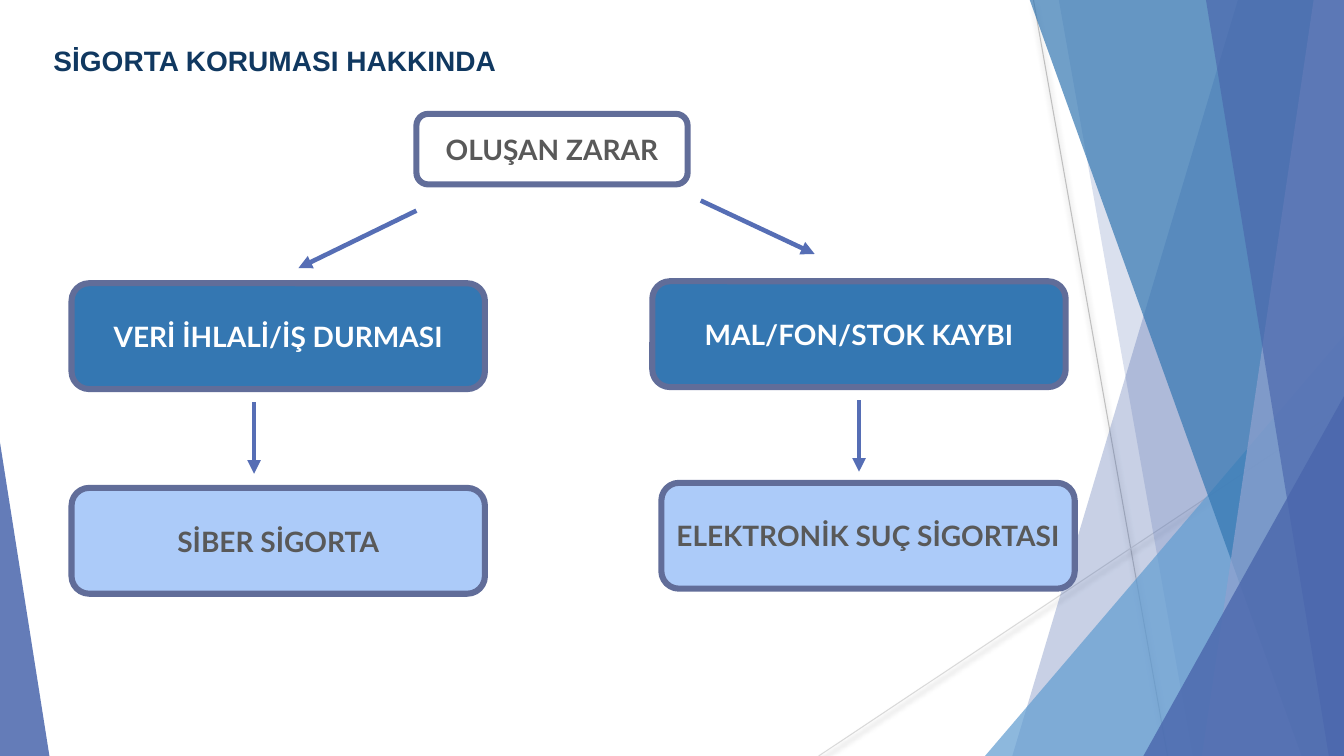
from dataclasses import dataclass

from pptx import Presentation
from pptx.dml.color import RGBColor
from pptx.enum.shapes import MSO_CONNECTOR, MSO_SHAPE
from pptx.enum.text import MSO_ANCHOR, MSO_AUTO_SIZE, PP_ALIGN
from pptx.oxml import parse_xml
from pptx.oxml.ns import nsdecls
from pptx.util import Inches, Pt


@dataclass(frozen=True)
class Theme:
    title: str = "103860"
    text: str = "595959"
    white: str = "FFFFFF"
    indigo: str = "4A66AC"
    blue: str = "3477B2"
    sky: str = "629DD1"
    lavender: str = "90A2CF"
    pale: str = "ACCBF9"
    border: str = "616D99"
    arrow: str = "566EB5"
    hairline: str = "BFBFBF"
    hairline_light: str = "D9D9D9"
    heading_font: str = "Arial"
    box_font: str = "Lato"
    size: int = 20
    border_width: float = 4.33
    arrow_width: float = 3.25
    hairline_width: float = 0.75


THEME = Theme()
SLIDE_W, SLIDE_H = 13.33, 7.5
SHADOW = ('<a:outerShdw blurRad="50800" dist="38100" dir="5400000" rotWithShape="0">'
          '<a:srgbClr val="000000"><a:alpha val="35000"/></a:srgbClr></a:outerShdw>')


def write_text(sp, text, font=THEME.box_font, color=THEME.text,
               align=PP_ALIGN.CENTER, anchor=MSO_ANCHOR.MIDDLE, wrap=True):
    tf = sp.text_frame
    tf.word_wrap = wrap
    tf.vertical_anchor = anchor
    p = tf.paragraphs[0]
    p.alignment = align
    r = p.add_run()
    r.text = text
    r.font.name = font
    r.font.size = Pt(THEME.size)
    r.font.bold = True
    r.font.color.rgb = RGBColor.from_string(color)


def add_line(start, end, color, width, effect=""):
    """Draw a straight line whose only effect is the given effect XML."""
    line = slide.shapes.add_connector(
        MSO_CONNECTOR.STRAIGHT, *(Inches(v) for v in (*start, *end)))
    line.line.color.rgb = RGBColor.from_string(color)
    line.line.width = Pt(width)
    line._element.spPr.append(
        parse_xml(f'<a:effectLst {nsdecls("a")}>{effect}</a:effectLst>'))
    return line


prs = Presentation()
prs.slide_width, prs.slide_height = Inches(SLIDE_W), Inches(SLIDE_H)
slide = prs.slides.add_slide(prs.slide_layouts[5])

# Decorative hairlines
add_line((10.25, 0), (11.58, SLIDE_H), THEME.hairline, THEME.hairline_width, SHADOW)
add_line((SLIDE_W, 4.03), (8.12, SLIDE_H), THEME.hairline_light,
         THEME.hairline_width, SHADOW)

# Bands run from a top-left x to a bottom-left x and on to the right edge;
# triangles have left, top, width, height and apex position.
facets = [
    ("band", (12.28, 10.04), THEME.indigo, 30),
    ("band", (10.5, 11.83), THEME.indigo, 20),
    ("triangle", (9.77, 3.33, 3.56, 4.17, 1), THEME.sky, 72),
    ("band", (10.21, 12.91), THEME.blue, 70),
    ("band", (13.03, 11.92), THEME.lavender, 70),
    ("band", (11.96, 13.18), THEME.indigo, 65),
    ("triangle", (11.34, 3.93, 1.99, 3.57, 1), THEME.indigo, 80),
    ("triangle", (0, 4.39, 0.49, 3.11, 0), THEME.indigo, 85),
]
for kind, geometry, color, opacity in facets:
    if kind == "band":
        top_x, bottom_x = geometry
        corners = [(Inches(x), Inches(y)) for x, y in (
            (top_x, -0.01), (SLIDE_W, -0.01), (SLIDE_W, SLIDE_H), (bottom_x, SLIDE_H))]
        builder = slide.shapes.build_freeform(*corners[0])
        builder.add_line_segments(corners[1:], close=True)
        sp = builder.convert_to_shape()
    else:
        *frame, apex = geometry
        sp = slide.shapes.add_shape(
            MSO_SHAPE.ISOSCELES_TRIANGLE, *(Inches(v) for v in frame))
        sp.adjustments[0] = apex
    sp.shadow.inherit = False
    sp.line.fill.background()
    sp.fill.solid()
    sp.fill.fore_color.rgb = RGBColor.from_string(color)
    sp.fill._xPr.solidFill[0].append(
        parse_xml(f'<a:alpha {nsdecls("a")} val="{opacity * 1000}"/>'))

title = slide.shapes.title
title.left, title.top, title.width, title.height = (
    Inches(v) for v in (0.43, 0.38, 4.66, 0.44))
write_text(title, "SİGORTA KORUMASI HAKKINDA", font=THEME.heading_font,
           color=THEME.title, align=PP_ALIGN.LEFT, anchor=MSO_ANCHOR.TOP, wrap=False)
title.text_frame.auto_size = MSO_AUTO_SIZE.SHAPE_TO_FIT_TEXT

# Flow chart boxes
BOX = (4.1, 1.05)
boxes = [
    ("OLUŞAN ZARAR", (4.13, 1.13), (2.69, 0.7), None, THEME.text),
    ("VERİ İHLALİ/İŞ DURMASI", (0.71, 2.81), BOX, THEME.blue, THEME.white),
    ("MAL/FON/STOK KAYBI", (6.47, 2.79), BOX, THEME.blue, THEME.white),
    ("SİBER SİGORTA", (0.71, 4.84), BOX, THEME.pale, THEME.text),
    ("ELEKTRONİK SUÇ SİGORTASI", (6.56, 4.79), BOX, THEME.pale, THEME.text),
]
for text, position, size, fill, color in boxes:
    sp = slide.shapes.add_shape(
        MSO_SHAPE.ROUNDED_RECTANGLE, *(Inches(v) for v in (*position, *size)))
    sp.shadow.inherit = False
    if fill:
        sp.fill.solid()
        sp.fill.fore_color.rgb = RGBColor.from_string(fill)
    else:
        sp.fill.background()
    sp.line.color.rgb = RGBColor.from_string(THEME.border)
    sp.line.width = Pt(THEME.border_width)
    sp.text_frame.margin_left = sp.text_frame.margin_right = Inches(0.05)
    write_text(sp, text, color=color)

# Arrows float in the gaps between the boxes
arrows = [
    ((4.13, 2.09), (2.96, 2.66)),
    ((6.95, 1.99), (8.08, 2.52)),
    ((2.52, 3.99), (2.52, 4.7)),
    ((8.52, 3.97), (8.52, 4.68)),
]
for start, end in arrows:
    arrow = add_line(start, end, THEME.arrow, THEME.arrow_width)
    arrow.line._get_or_add_ln().append(
        parse_xml(f'<a:tailEnd {nsdecls("a")} type="triangle"/>'))

prs.save("out.pptx")
